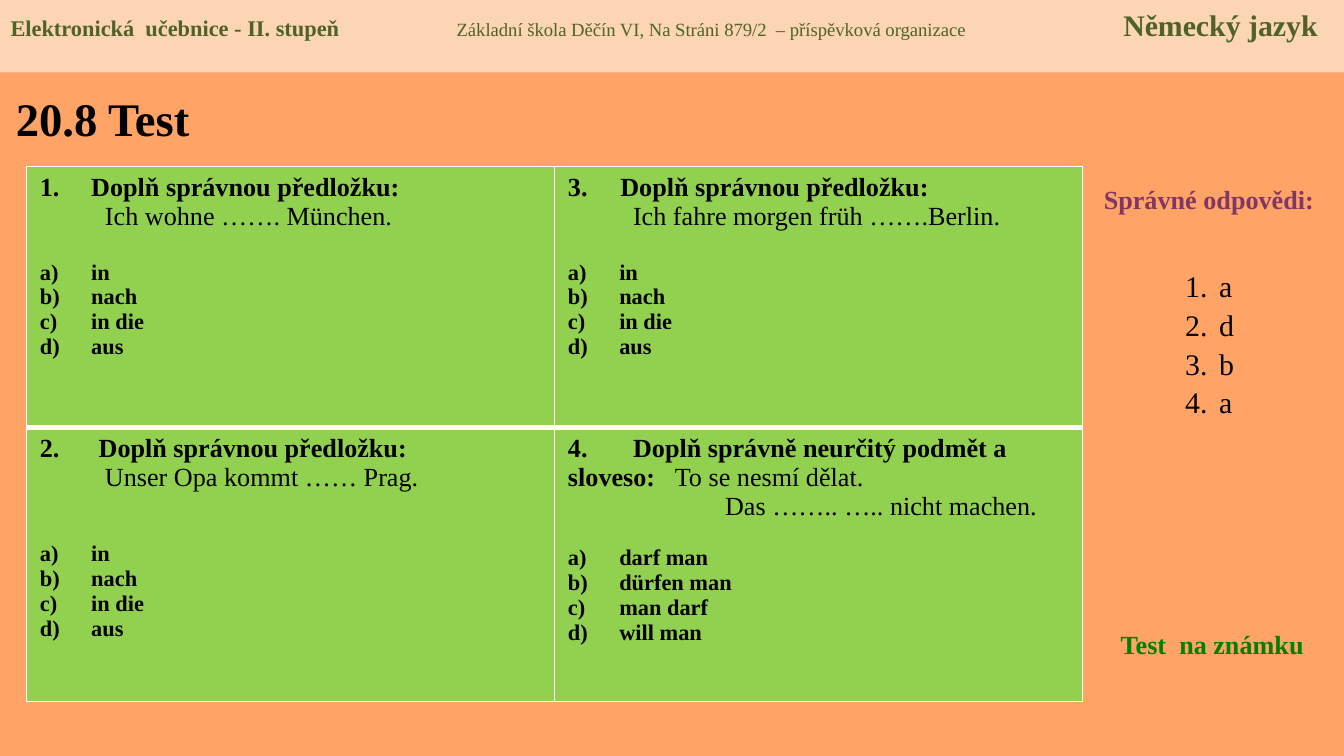
"""Build a German grammar test slide with a grid of tasks and a key."""
from lxml.etree import SubElement as Sub
from pptx import Presentation
from pptx.dml.color import RGBColor as Rgb
from pptx.enum.shapes import MSO_SHAPE as Shape
from pptx.enum.text import MSO_ANCHOR as Anchor, PP_ALIGN as Align
from pptx.oxml.ns import qn
from pptx.util import Cm, Pt

BLACK = Rgb(0, 0, 0)
WHITE = Rgb(255, 255, 255)
ORANGE = Rgb(0xFF, 0xA3, 0x66)
PEACH = Rgb(0xFC, 0xD5, 0xB5)
LIME = Rgb(0x92, 0xD0, 0x50)
OLIVE = Rgb(0x4F, 0x62, 0x28)
PLUM = Rgb(0x81, 0x37, 0x63)
GREEN = Rgb(0, 0x80, 0)
FONT = "Times New Roman"
HANG = 0.97

TASKS = {
    (0, 0): dict(head="Doplň správnou předložku:", list_no=True,
                 line="Ich wohne ……. München.", inset=1.23, gap=15.5,
                 picks=("in", "nach", "in die", "aus")),
    (0, 1): dict(head="3.\tDoplň správnou předložku:", tabs=(0.99,),
                 line="Ich fahre morgen früh …….Berlin.", inset=1.23, gap=15.5,
                 picks=("in", "nach", "in die", "aus")),
    (1, 0): dict(head="2.\tDoplň správnou předložku:", tabs=(1.11,),
                 line="Unser Opa kommt …… Prag.", inset=1.23, gap=26.6,
                 picks=("in", "nach", "in die", "aus")),
    (1, 1): dict(head="4.\tDoplň správně neurčitý podmět a sloveso:\t",
                 tabs=(1.23, 2.02), tail="To se nesmí dělat.",
                 line="Das …….. ….. nicht machen.", inset=2.97, gap=13.3,
                 picks=("darf man", "dürfen man", "man darf", "will man")),
}


def put(para, words, size=14, color=BLACK, bold=False):
    """Add a run of text in the given format."""
    run = para.add_run()
    run.text = words
    font = run.font
    font.name, font.size, font.bold = FONT, Pt(size), bold
    font.color.rgb = color


def indent(para, left, hang=0, mark=None):
    """Indent a paragraph and number it if a mark is given."""
    props = para._p.get_or_add_pPr()
    props.set("marL", str(Cm(left)))
    props.set("indent", str(-Cm(hang)))
    if mark:
        Sub(props, qn("a:buFont"), typeface=FONT)
        Sub(props, qn("a:buAutoNum"), type=mark)


def add_tabs(para, stops):
    """Set left tab stops in centimetres."""
    tabs = Sub(para._p.get_or_add_pPr(), qn("a:tabLst"))
    for stop in stops:
        Sub(tabs, qn("a:tab"), pos=str(Cm(stop)), algn="l")


def add_box(slide, left, top, width, height):
    """Add a wrapped text box and return its frame."""
    box = slide.shapes.add_textbox(Cm(left), Cm(top), Cm(width), Cm(height))
    frame = box.text_frame
    frame.word_wrap = True
    frame.margin_right = 0
    return frame


def add_edge(cell, side, width):
    """Draw a white line on one side of a cell."""
    props = cell._tc.get_or_add_tcPr()
    line = Sub(props, qn(f"a:ln{side}"), w=str(Pt(width)))
    fill = Sub(line, qn("a:solidFill"))
    Sub(fill, qn("a:srgbClr"), val=str(WHITE))


def fill_cell(cell, head, line, inset, gap, picks, tabs=(), tail="", list_no=False):
    """Write one task with its answer choices."""
    frame = cell.text_frame
    para = frame.paragraphs[0]
    if list_no:
        indent(para, HANG, HANG, "arabicPeriod")
    if tabs:
        add_tabs(para, tabs)
    put(para, head, bold=True)
    if tail:
        put(para, tail)
    para = frame.add_paragraph()
    indent(para, inset)
    put(para, line)
    for index, pick in enumerate(picks):
        para = frame.add_paragraph()
        indent(para, HANG, HANG, "alphaLcParenR")
        if index == 0:
            para.space_before = Pt(gap)
        put(para, pick, size=12, bold=True)


def add_grid(slide):
    """Add the table of four tasks."""
    frame = slide.shapes.add_table(2, 2, Cm(0.5), Cm(3.15), Cm(19.96), Cm(10.11))
    grid = frame.table
    for row, height in zip(grid.rows, (4.93, 5.18)):
        row.height = Cm(height)
    for (row, col), task in TASKS.items():
        cell = grid.cell(row, col)
        thick = "B" if row == 0 else "T"
        for side in "LRTB":
            add_edge(cell, side, 3 if side == thick else 1)
        cell.fill.solid()
        cell.fill.fore_color.rgb = LIME
        fill_cell(cell, **task)


def add_key(slide):
    """Add the list of right answers."""
    frame = add_box(slide, 22.15, 4.19, 1.4, 5.05)
    frame.margin_top = Cm(0.82)
    for index, key in enumerate("adba"):
        para = frame.add_paragraph() if index else frame.paragraphs[0]
        indent(para, 0.64, 0.64, "arabicPeriod")
        para.line_spacing = 1.08
        put(para, key, size=16)


def add_banner(slide):
    """Add the strip with book, school and subject."""
    strip = slide.shapes.add_shape(Shape.RECTANGLE, Cm(-0.05), 0, Cm(25.45), Cm(1.37))
    strip.shadow.inherit = False
    strip.fill.solid()
    strip.fill.fore_color.rgb = PEACH
    strip.line.fill.background()
    frame = strip.text_frame
    frame.vertical_anchor = Anchor.TOP
    para = frame.paragraphs[0]
    para.alignment = Align.LEFT
    add_tabs(para, (8.43, 21.03))
    put(para, "Elektronická  učebnice - II. stupeň\t", 12, OLIVE, True)
    put(para, "Základní škola Děčín VI, Na Stráni 879/2  – příspěvková organizace\t", 10, OLIVE)
    put(para, "Německý jazyk", 16, OLIVE, True)


def main():
    """Build and save the slide."""
    deck = Presentation()
    deck.slide_width, deck.slide_height = Cm(25.4), Cm(14.29)
    slide = deck.slides.add_slide(deck.slide_layouts[6])
    back = slide.background.fill
    back.solid()
    back.fore_color.rgb = ORANGE

    title = add_box(slide, 0.05, 1.4, 8.1, 1.65)
    title.vertical_anchor = Anchor.MIDDLE
    put(title.paragraphs[0], "20.8 Test", 25, bold=True)

    label = add_box(slide, 20.45, 3.35, 4.8, 0.86)
    label.margin_left = 0
    label.paragraphs[0].alignment = Align.CENTER
    put(label.paragraphs[0], "Správné odpovědi:", color=PLUM, bold=True)

    add_grid(slide)
    add_key(slide)
    note = add_box(slide, 20.93, 11.76, 3.99, 0.86)
    put(note.paragraphs[0], "Test  na známku", color=GREEN, bold=True)
    add_banner(slide)
    deck.save("out.pptx")


if __name__ == "__main__":
    main()
